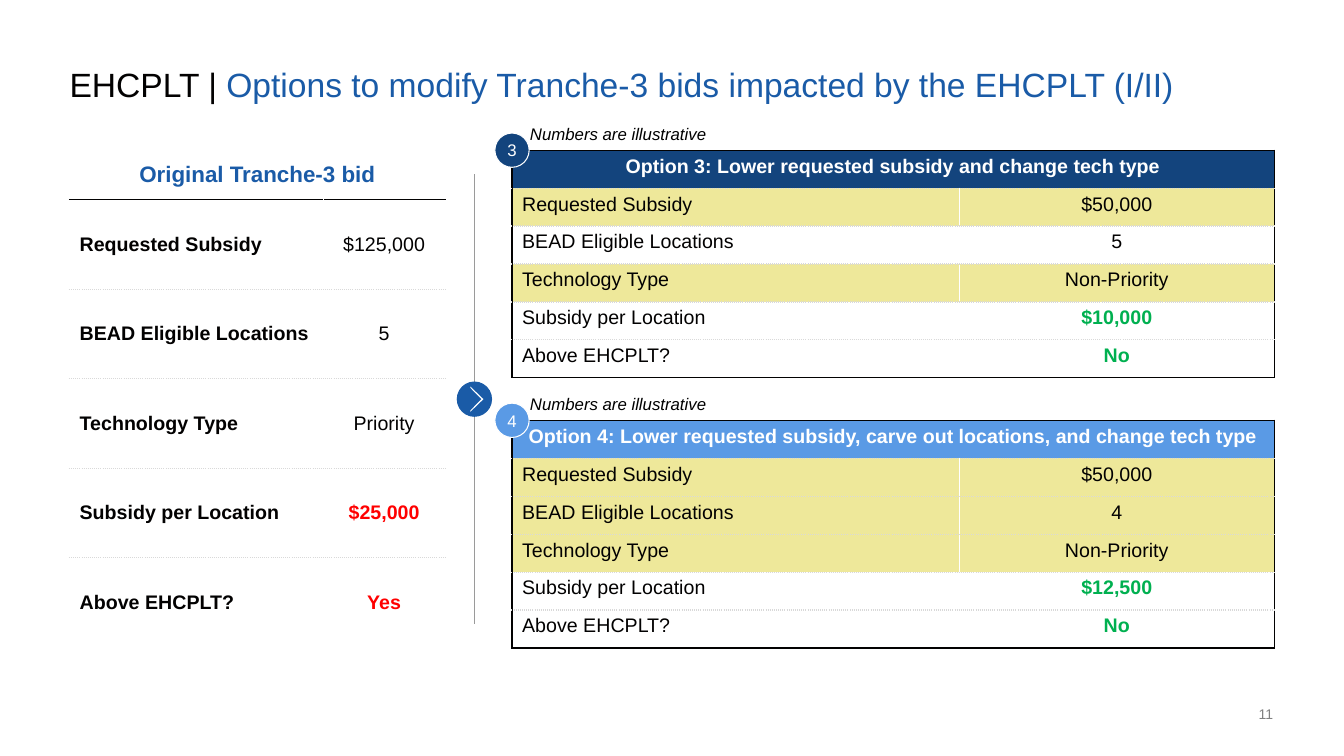
from lxml import etree
from pptx import Presentation
from pptx.dml.color import RGBColor
from pptx.enum.shapes import MSO_CONNECTOR, MSO_SHAPE
from pptx.enum.text import MSO_ANCHOR, PP_ALIGN
from pptx.oxml.ns import qn
from pptx.util import Pt

LINE, OVAL = MSO_CONNECTOR.STRAIGHT, MSO_SHAPE.OVAL
TOP, MID, LOW = MSO_ANCHOR.TOP, MSO_ANCHOR.MIDDLE, MSO_ANCHOR.BOTTOM
LEFT, MIDST, RIGHT = PP_ALIGN.LEFT, PP_ALIGN.CENTER, PP_ALIGN.RIGHT

# Grid: 160 columns by 90 rows of square units
COLS, ROWS, UNIT = 160, 90, 76200
INK, WHITE, GREY, DOTS = "020101", "FFFFFF", "9A9A9A", "D9D9D9"
BLUE, NAVY, SKY = "1A5BA7", "13447D", "5A9AE5"
SAND, RED, GREEN = "EEE89A", "FF0000", "00B050"


def paint(code):
    return RGBColor.from_string(code)


def span(units):
    return round(units * UNIT)


class Board:
    font = "Arial"

    def __init__(self, deck):
        self.slide = deck.slides.add_slide(deck.slide_layouts[6])
        self.shapes = self.slide.shapes

    def words(self, para, runs, size, align=LEFT, bold=False, slant=False):
        para.alignment = align
        font = para.font
        font.name, font.size = self.font, Pt(size)
        font.bold, font.italic = bold, slant
        for text, hue in runs:
            run = para.add_run()
            run.text = text
            run.font.color.rgb = paint(hue)

    def frame(self, shape, pad, anchor):
        frame = shape.text_frame
        frame.word_wrap, frame.vertical_anchor = True, anchor
        frame.margin_left = frame.margin_right = span(pad)
        frame.margin_top = frame.margin_bottom = 0
        return frame.paragraphs[0]

    def text(self, x, y, w, h, runs, size, pad=0, anchor=TOP, **style):
        box = self.shapes.add_textbox(*map(span, (x, y, w, h)))
        para = self.frame(box, pad, anchor)
        self.words(para, runs, size, **style)
        return para

    def finish(self, shape, fill, edge=None):
        shape.shadow.inherit = False
        shape.fill.solid()
        shape.fill.fore_color.rgb = paint(fill)
        if edge:
            shape.line.color.rgb = paint(edge)
            shape.line.width = Pt(0.75)
        else:
            shape.line.fill.background()

    def disc(self, x, y, fill, edge, text=None, size=4.08):
        """Draw a disc centred on x, y."""
        half = size / 2
        disc = self.shapes.add_shape(
            OVAL, *map(span, (x - half, y - half, size, size)))
        self.finish(disc, fill, edge)
        if text:
            self.words(self.frame(disc, 0, MID), [(text, WHITE)], 12, MIDST)

    def rule(self, x, top, end):
        rule = self.shapes.add_connector(LINE, *map(span, (x, top, x, end)))
        rule.line.color.rgb = paint(GREY)
        rule.line.width = Pt(0.75)
        etree.SubElement(rule._element.spPr, qn("a:effectLst"))

    def arrow(self, x, y):
        """Draw a thin chevron around x, y."""
        pts = [(-0.48, 1.5), (-0.48, 1.35), (0.84, 0), (-0.48, -1.35),
               (-0.48, -1.5), (1.08, 0)]
        pts = [(span(x + dx), span(y + dy)) for dx, dy in pts]
        pen = self.shapes.build_freeform(*pts[0], scale=1.0)
        pen.add_line_segments(pts[1:], close=True)
        self.finish(pen.convert_to_shape(), WHITE)

    def edge(self, cell, side, hue):
        """Add one cell border; the grey ones are dotted."""
        line = etree.SubElement(
            cell._tc.get_or_add_tcPr(), qn("a:ln" + side), w="12700")
        fill = etree.SubElement(line, qn("a:solidFill"))
        etree.SubElement(fill, qn("a:srgbClr"), val=hue)
        dash = "sysDot" if hue == DOTS else "solid"
        etree.SubElement(line, qn("a:prstDash"), val=dash)

    def table(self, x, y, cols, rows, head, body, rim, under, anchor):
        """Head is (text, hue, fill, size); body rows are
        (label, value, value hue, fill, bold label)."""
        last = len(rows) - 1
        grid = self.shapes.add_table(
            len(rows), 2, *map(span, (x, y, sum(cols), sum(rows)))).table
        grid.first_row = grid.horz_banding = False
        for col, wide in zip(grid.columns, cols):
            col.width = span(wide)
        for row, high in zip(grid.rows, rows):
            row.height = span(high)

        # Borders first, then fills
        fills = [head[2]] + [line[3] for line in body]
        for r, fill in enumerate(fills):
            for c in range(2):
                cell = grid.cell(r, c)
                if r or c == 0:
                    self.edge(cell, "L", WHITE if c else rim)
                self.edge(cell, "R", rim if c or r == 0 else WHITE)
                self.edge(cell, "T", (rim, under)[r] if r < 2 else DOTS)
                self.edge(cell, "B", under if r == 0 else
                          rim if r == last else DOTS)
                cell.fill.solid()
                cell.fill.fore_color.rgb = paint(fill)
                cell.vertical_anchor = anchor

        # Words
        grid.cell(0, 0).merge(grid.cell(0, 1))
        text, hue, _, size = head
        self.words(grid.cell(0, 0).text_frame.paragraphs[0],
                   [(text, hue)], size, MIDST, True)
        for r, (label, value, hue, _, bold) in enumerate(body, 1):
            left, right = (grid.cell(r, c).text_frame.paragraphs[0]
                           for c in range(2))
            self.words(left, [(label, INK)], 14, LEFT, bold)
            self.words(right, [(value, hue)], 14, MIDST, hue != INK)


def main():
    deck = Presentation()
    deck.slide_width, deck.slide_height = span(COLS), span(ROWS)
    board = Board(deck)
    labels = ["Requested Subsidy", "BEAD Eligible Locations",
              "Technology Type", "Subsidy per Location", "Above EHCPLT?"]

    # Title and page number
    title = board.text(8.28, 8.16, 143.52, 4.32, [
        ("EHCPLT |", INK),
        (" Options to modify Tranche-3 bids impacted by the EHCPLT (I/II)",
         BLUE)], 24)
    title.line_spacing = 0.9
    board.text(146.52, 84, 5.04, 2.04, [("11", "808080")], 10,
               anchor=LOW, align=RIGHT)

    # First bid
    top = 17.88
    values = ["$125,000", "5", "Priority", "$25,000", "Yes"]
    hues = [INK] * 3 + [RED] * 2
    body = [(label, value, hue, WHITE, True)
            for label, value, hue in zip(labels, values, hues)]
    board.table(8.28, top, [30.2, 14.5], [5.88] + [10.66] * 5,
                ("Original Tranche-3 bid", BLUE, WHITE, 16), body,
                WHITE, INK, MID)

    # Options: number, top, colour, heading, values, changed rows
    left = 60.96
    options = [
        ("4", 50.04, SKY, "Option 4: Lower requested subsidy, carve out "
         "locations, and change tech type",
         ["$50,000", "4", "Non-Priority", "$12,500", "No"], {0, 1, 2}),
        ("3", top, NAVY,
         "Option 3: Lower requested subsidy and change tech type",
         ["$50,000", "5", "Non-Priority", "$10,000", "No"], {0, 2}),
    ]
    hues = [INK] * 3 + [GREEN] * 2
    for mark, y, tone, head, values, changed in options:
        body = [(label, value, hue, SAND if r in changed else WHITE, False)
                for r, (label, value, hue)
                in enumerate(zip(labels, values, hues))]
        board.table(left, y, [53.25, 37.5], [4.52] * 6,
                    (head, WHITE, tone, 14), body, INK, DOTS, TOP)
        board.disc(left, y, tone, WHITE, mark)
        board.text(61.92, y - 3.2, 26.88, 2.4,
                   [("Numbers are illustrative", "000000")], 12,
                   pad=1.2, anchor=MID, slant=True)

    # Divider with arrow
    mid, level = 56.48, 47.52
    board.rule(mid, 20.76, 74.28)
    board.disc(mid, level, BLUE, BLUE)
    board.arrow(mid, level)

    deck.save("out.pptx")


if __name__ == "__main__":
    main()
